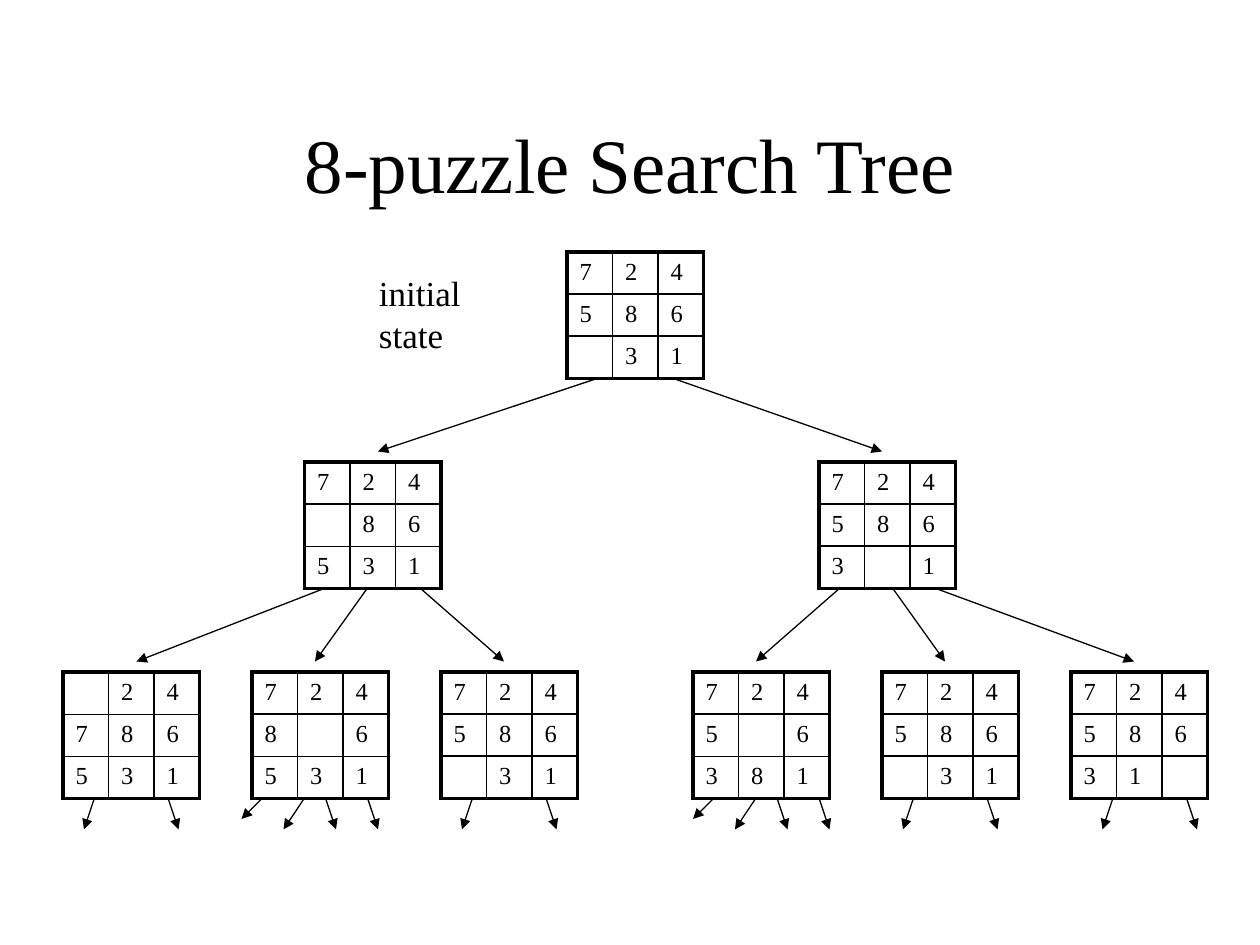
from lxml.etree import SubElement
from pptx import Presentation
from pptx.dml.color import RGBColor as RGB
from pptx.enum.shapes import MSO_CONNECTOR as Connector
from pptx.enum.text import MSO_ANCHOR as Anchor, PP_ALIGN as Align
from pptx.oxml.ns import qn
from pptx.util import Pt

COLORS = {"ink": "000000"}
TILE_WIDTH, TILE_HEIGHT = 26, 24
BOARD_WIDTH, BOARD_HEIGHT = 3 * TILE_WIDTH, 3 * TILE_HEIGHT
ARROW_GAP = 6

ROOT = (324, 144, "724 586  31")
PARENTS = [(174, 264, "724  86 531"), (468, 264, "724 586 3 1")]
LEAVES = [
    (36, 384, " 24 786 531"),
    (144, 384, "724 8 6 531"),
    (252, 384, "724 586  31"),
    (396, 384, "724 5 6 381"),
    (504, 384, "724 586  31"),
    (612, 384, "724 586 31 "),
]
BRANCHES = [
    (ROOT, PARENTS, (18, 60), (42, 36)),
    (PARENTS[0], LEAVES[:3], (12, 36, 66), (42, 36, 36)),
    (PARENTS[1], LEAVES[3:], (12, 42, 66), (36, 36, 36)),
]
TWO_MOVES = [(18, 12, 18), (60, 66, 18)]
FOUR_MOVES = [(6, -6, 12), (30, 18, 18), (42, 48, 18), (66, 72, 18)]
STUBS = [(TWO_MOVES, 0), (FOUR_MOVES, 0), (TWO_MOVES, 0),
         (FOUR_MOVES, 6), (TWO_MOVES, 0), (TWO_MOVES, 6)]


class TreeSlide:
    font = "Times New Roman"
    ink = RGB.from_string(COLORS["ink"])
    outer, inner, arrow_width = 2.25, 1, 0.75

    def __init__(self, slide):
        self.slide = slide

    def add_words(self, paragraph, words, size):
        run = paragraph.add_run()
        run.text = words
        for name, value in {"name": self.font, "size": Pt(size), "bold": False}.items():
            setattr(run.font, name, value)
        run.font.color.rgb = self.ink

    def title(self, words, left, top, width, height):
        heading = self.slide.shapes.title
        place = {"left": left, "top": top, "width": width, "height": height}
        for name, value in place.items():
            setattr(heading, name, Pt(value))
        heading.text_frame.vertical_anchor = Anchor.MIDDLE
        paragraph = heading.text_frame.paragraphs[0]
        paragraph.alignment = Align.CENTER
        self.add_words(paragraph, words, 44)

    def label(self, words, left, top, width, height):
        frame = self.slide.shapes.add_textbox(
            Pt(left), Pt(top), Pt(width), Pt(height)).text_frame
        frame.word_wrap = True
        self.add_words(frame.paragraphs[0], words, 20)

    def border(self, cell, side, width):
        edge = SubElement(cell._tc.get_or_add_tcPr(), qn(f"a:ln{side}"),
                          w=str(Pt(width)))
        fill = SubElement(edge, qn("a:solidFill"))
        SubElement(fill, qn("a:srgbClr"), val=COLORS["ink"])

    def board(self, left, top, tiles):
        table = self.slide.shapes.add_table(
            3, 3, Pt(left), Pt(top), Pt(BOARD_WIDTH), Pt(BOARD_HEIGHT)).table
        for option in ("first_row", "horz_banding"):
            setattr(table, option, False)
        for row in range(3):
            for column in range(3):
                cell = table.cell(row, column)
                on_edge = {"L": column == 0, "R": column == 2,
                           "T": row == 0, "B": row == 2}
                for side, is_outer in on_edge.items():
                    self.border(cell, side, self.outer if is_outer else self.inner)
                cell.fill.background()
                tile = tiles[4 * row + column]
                paragraph = cell.text_frame.paragraphs[0]
                if tile == " ":
                    SubElement(paragraph._p, qn("a:endParaRPr"), sz="1400")
                else:
                    self.add_words(paragraph, tile, 14)

    def arrow(self, x1, y1, x2, y2):
        connector = self.slide.shapes.add_connector(
            Connector.STRAIGHT, Pt(x1), Pt(y1), Pt(x2), Pt(y2))
        connector.line.color.rgb = self.ink
        connector.line.width = Pt(self.arrow_width)
        SubElement(connector.line._get_or_add_ln(), qn("a:tailEnd"), type="triangle")
        SubElement(connector._element.spPr, qn("a:effectLst"))


def main():
    deck = Presentation()
    deck.slide_width, deck.slide_height = Pt(720), Pt(540)
    tree = TreeSlide(deck.slides.add_slide(deck.slide_layouts[5]))
    tree.title("8-puzzle Search Tree", 54, 48, 612, 90)

    for state in [ROOT, *LEAVES, *PARENTS]:
        tree.board(*state)

    for (left, top, _), children, starts, ends in BRANCHES:
        for (child_left, child_top, _), start, end in zip(children, starts, ends):
            tree.arrow(left + start, top + BOARD_HEIGHT,
                       child_left + end, child_top - ARROW_GAP)

    for (left, top, _), (moves, shift) in zip(LEAVES, STUBS):
        bottom = top + BOARD_HEIGHT
        for start, end, drop in moves:
            tree.arrow(left + shift + start, bottom, left + shift + end, bottom + drop)

    tree.label("initial state", 209.5, 151.5, 100, 31)
    deck.save("out.pptx")


if __name__ == "__main__":
    main()
